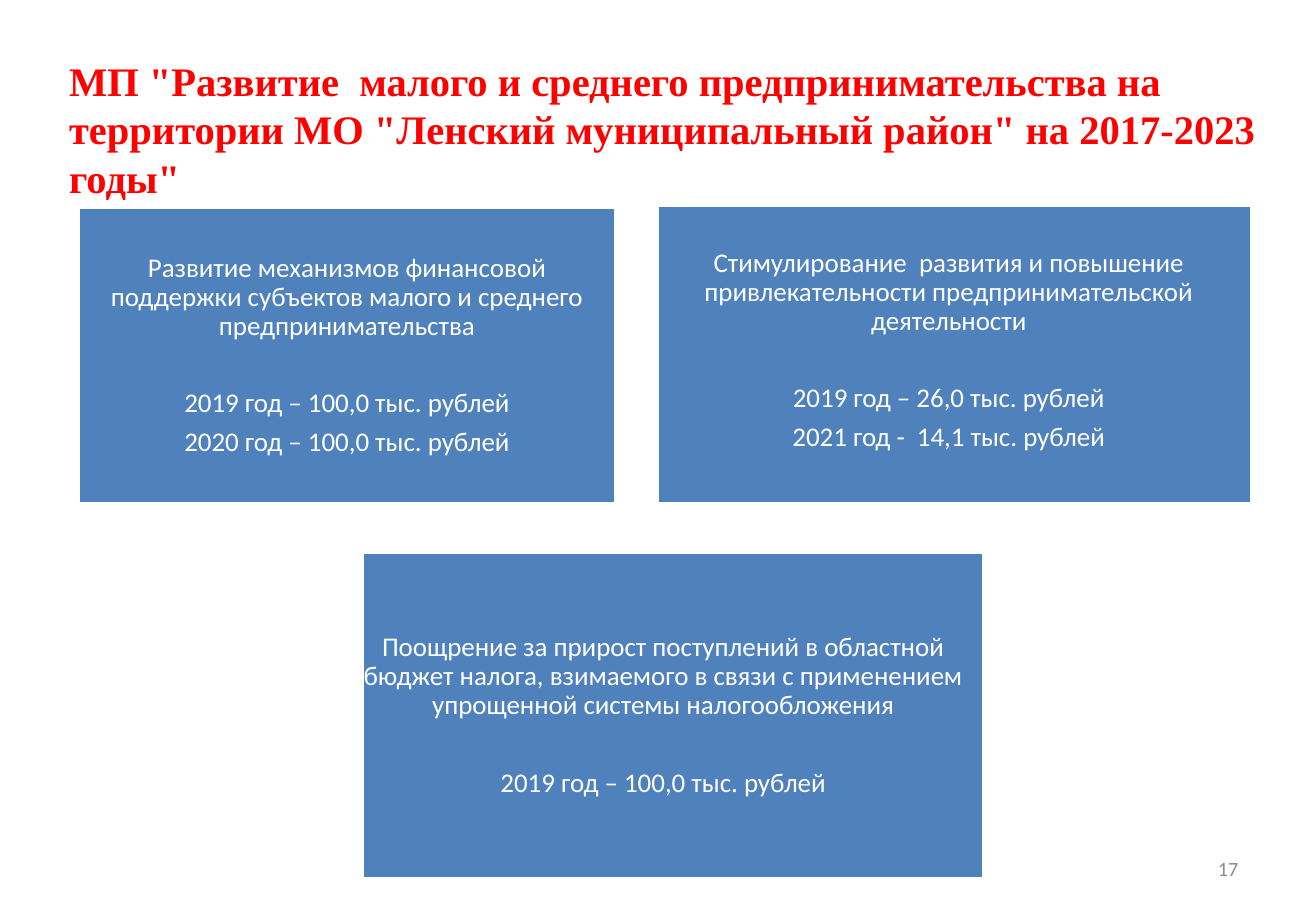
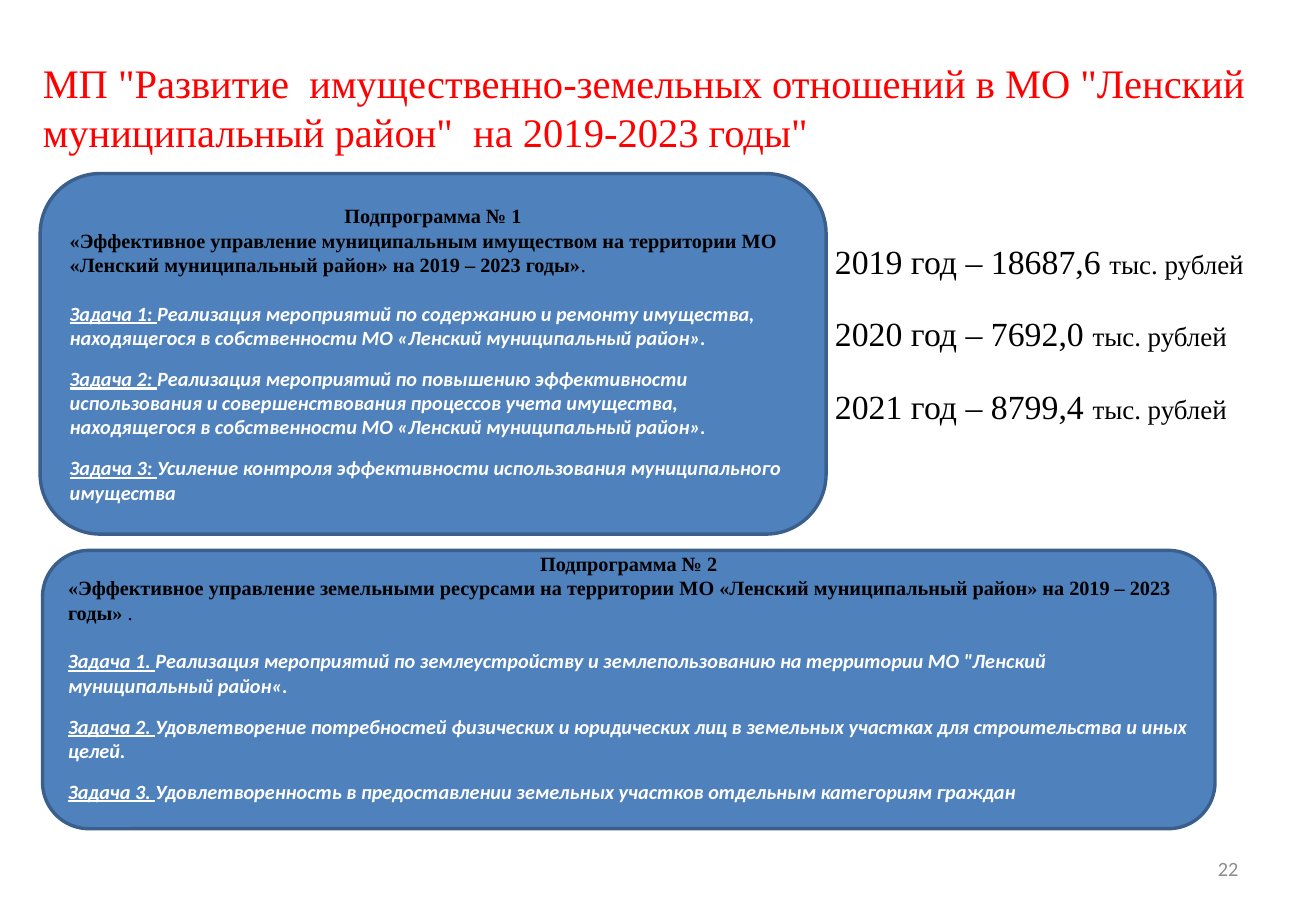
"""Build two slides on the municipal programmes of the Lensky district."""
import pptx
import pptx.dml.color
import pptx.enum.shapes
import pptx.enum.text
import pptx.util

Cm = pptx.util.Cm
Pt = pptx.util.Pt
RGB = pptx.dml.color.RGBColor.from_string
Align = pptx.enum.text.PP_ALIGN
Anchor = pptx.enum.text.MSO_ANCHOR
Shape = pptx.enum.shapes.MSO_SHAPE


class Theme:
    red, blue, edge = RGB("FF0000"), RGB("4F81BD"), RGB("3A5F8C")
    white, black, grey = RGB("FFFFFF"), RGB("000000"), RGB("8C8C8C")
    serif, sans = "Times New Roman", "Calibri"
    title, year, panel, unit, small = 24, 20, 16, 16, 12


def write(para, text, size, face, color, bold=False, italic=False, under=False):
    run = para.add_run()
    run.text = text
    font = run.font
    font.size, font.name, font.color.rgb = Pt(size), face, color
    font.bold, font.italic, font.underline = bold, italic, under


def block(slide, kind, area, insets, edge):
    shape = slide.shapes.add_shape(kind, *map(Cm, area))
    shape.shadow.inherit = False
    shape.fill.solid()
    shape.fill.fore_color.rgb = Theme.blue
    shape.line.color.rgb = edge
    shape.line.width = Pt(2)
    frame = shape.text_frame
    frame.word_wrap = True
    frame.vertical_anchor = Anchor.MIDDLE
    (frame.margin_left, frame.margin_top,
     frame.margin_right, frame.margin_bottom) = map(Cm, insets)
    return frame


deck = pptx.Presentation()
deck.slide_width, deck.slide_height = Cm(27.51), Cm(19.05)

heads = [
    (5, "17", (1.19, 1.04, 25.65, 3.33), True,
     'МП "Развитие  малого и среднего предпринимательства на территории '
     'МО "Ленский муниципальный район" на 2017-2023 годы"'),
    (1, "22", (0.64, 1.09, 26.24, 2.31), False,
     'МП "Развитие  имущественно-земельных отношений в '
     'МО "Ленский муниципальный район"  на 2019-2023 годы"'),
]
for layout, number, area, bold, text in heads:
    slide = deck.slides.add_slide(deck.slide_layouts[layout])
    title = slide.shapes.title
    title.left, title.top, title.width, title.height = map(Cm, area)
    frame = title.text_frame
    frame.auto_size = pptx.enum.text.MSO_AUTO_SIZE.NONE
    frame.vertical_anchor = Anchor.TOP
    frame.paragraphs[0].alignment = Align.LEFT
    write(frame.paragraphs[0], text, Theme.title, Theme.serif, Theme.red, bold)

    box = slide.shapes.add_textbox(Cm(19.71), Cm(17.65), Cm(6.43), Cm(1.02))
    frame = box.text_frame
    frame.word_wrap = True
    frame.vertical_anchor = Anchor.MIDDLE
    frame.paragraphs[0].alignment = Align.RIGHT
    write(frame.paragraphs[0], number, Theme.small, Theme.sans, Theme.grey)

support, estate = deck.slides

panels = [
    ((1.63, 4.34, 11.25, 6.2), (0.18, 0.18, 0.18, 0.18),
     ["Развитие механизмов финансовой поддержки субъектов малого и среднего "
      "предпринимательства",
      "2019 год – 100,0 тыс. рублей", "2020 год – 100,0 тыс. рублей"]),
    ((7.57, 11.56, 13, 6.81), (0, 0.18, 0.41, 0.18),
     ["Поощрение за прирост поступлений в областной бюджет налога, взимаемого "
      "в связи с применением упрощенной системы налогообложения",
      "2019 год – 100,0 тыс. рублей"]),
    ((13.74, 4.29, 12.42, 6.25), (0.76, 0.69, 0.99, 0.86),
     ["Стимулирование  развития и повышение привлекательности "
      "предпринимательской деятельности",
      "2019 год – 26,0 тыс. рублей", "2021 год -  14,1 тыс. рублей"]),
]
for area, insets, lines in panels:
    frame = block(support, Shape.RECTANGLE, area, insets, Theme.white)
    frame.text = "\n".join(lines)
    for rank, para in enumerate(frame.paragraphs):
        para.alignment = Align.CENTER
        para.line_spacing = 0.9
        para.space_after = Pt(5.6 if rank else 28.5)
        font = para.runs[0].font
        font.size, font.name = Pt(Theme.panel), Theme.sans
        font.color.rgb = Theme.white

body = estate.placeholders[1]
body.left, body.top, body.width, body.height = map(Cm, (17.2, 4.9, 9.27, 4.19))
frame = body.text_frame
frame.auto_size = pptx.enum.text.MSO_AUTO_SIZE.NONE
sums = [("2019", "18687,6"), ("2020", "7692,0"), ("2021", "8799,4")]
for rank, (year, total) in enumerate(sums):
    para = frame.add_paragraph() if rank else frame.paragraphs[0]
    props = para._p.get_or_add_pPr()
    props.set("marL", "0")
    props.set("indent", "0")
    para.space_before, para.space_after = Pt(0), Pt(19)
    props.append(pptx.oxml.parse_xml(
        '<a:buNone xmlns:a="http://schemas.openxmlformats.org/drawingml/2006/main"/>'))
    write(para, f"{year} год – {total} ", Theme.year, Theme.serif, Theme.black)
    write(para, "тыс. рублей", Theme.unit, Theme.serif, Theme.black)

plans = [
    ((0.84, 3.63, 16.43, 7.54), 0.13, "Подпрограмма № 1",
     "«Эффективное управление муниципальным имуществом на территории МО "
     "«Ленский муниципальный район» на 2019 – 2023 годы»", ".", ":",
     ["Реализация мероприятий по содержанию и ремонту имущества, находящегося "
      "в собственности МО «Ленский муниципальный район».",
      "Реализация мероприятий по повышению эффективности использования и "
      "совершенствования процессов учета имущества, находящегося в "
      "собственности МО «Ленский муниципальный район».",
      "Усиление контроля эффективности использования муниципального имущества"]),
    ((0.89, 11.51, 24.51, 5.82), 0.64, "Подпрограмма № 2",
     "«Эффективное управление земельными ресурсами на территории МО "
     "«Ленский муниципальный район» на 2019 – 2023 годы»", " .", ".",
     ["Реализация мероприятий по землеустройству и землепользованию на "
      'территории МО "Ленский муниципальный район«.',
      "Удовлетворение потребностей физических и юридических лиц в земельных "
      "участках для строительства и иных целей.",
      "Удовлетворенность в предоставлении земельных участков отдельным "
      "категориям граждан"]),
]
for area, foot, name, goal, stop, mark, tasks in plans:
    frame = block(estate, Shape.ROUNDED_RECTANGLE, area,
                  (0.25, 0.13, 0.25, foot), Theme.edge)
    para = frame.paragraphs[0]
    para.alignment = Align.CENTER
    write(para, name, Theme.small, Theme.serif, Theme.black, True)
    para = frame.add_paragraph()
    para.alignment = Align.LEFT
    para.space_after = Pt(14.5)
    write(para, goal, Theme.small, Theme.serif, Theme.black, True)
    write(para, stop, Theme.small, Theme.serif, Theme.black)
    for rank, task in enumerate(tasks, 1):
        para = frame.add_paragraph()
        para.alignment = Align.LEFT
        para.space_after = Pt(9.8 if rank < len(tasks) else 0)
        write(para, f"Задача {rank}{mark} ", Theme.small, Theme.sans,
              Theme.white, True, True, True)
        write(para, task, Theme.small, Theme.sans, Theme.white, True, True)

deck.save("out.pptx")
